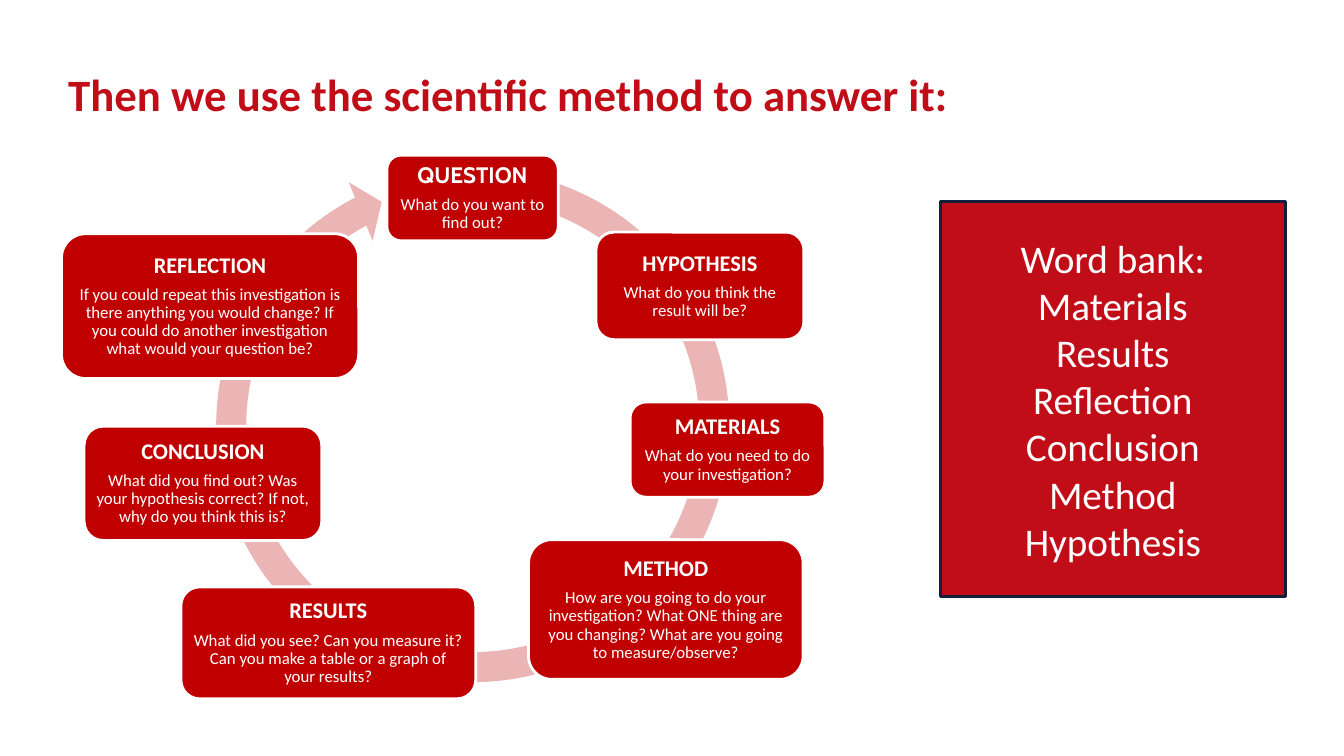
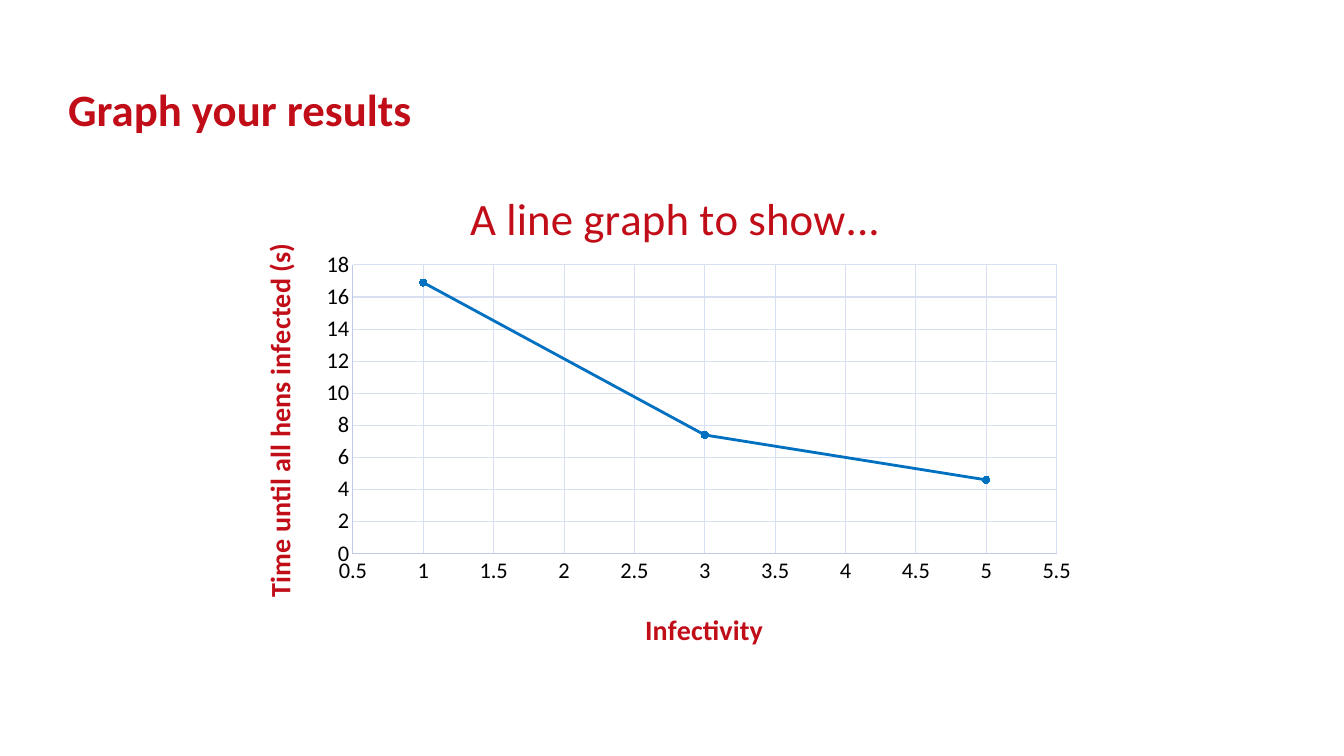
import lxml.etree
import pptx
import pptx.chart.data
import pptx.dml.color
import pptx.enum.chart
import pptx.enum.shapes
import pptx.enum.text
import pptx.oxml.ns
import pptx.util

Cm = pptx.util.Cm
Pt = pptx.util.Pt
qn = pptx.oxml.ns.qn
rgb = pptx.dml.color.RGBColor.from_string
shape_types = pptx.enum.shapes.MSO_SHAPE
middle = pptx.enum.text.MSO_ANCHOR.MIDDLE
center = pptx.enum.text.PP_ALIGN.CENTER

RED = "C10D18"
DARK_RED = "C00000"
NAVY = "141F3C"
WHITE = "FFFFFF"
BLACK = "000000"
BLUE = "0070C0"
AXIS_BLUE = "BDCAE9"
GRID_BLUE = "D8DFF2"
FONT = "Calibri"


def style_font(font, size, color, bold=False, name=FONT):
    font.name = name
    font.size = Pt(size)
    font.bold = bold
    font.color.rgb = rgb(color)


def set_layout(element, position, **fractions):
    """Place a chart part by fractions of the chart's width and height."""
    layout = element.find(qn("c:layout"))
    if layout is None:
        layout = lxml.etree.Element(qn("c:layout"))
        element.insert(position, layout)
    manual = lxml.etree.SubElement(layout, qn("c:manualLayout"))
    if "w" in fractions:
        lxml.etree.SubElement(manual, qn("c:layoutTarget")).set("val", "inner")
    for side in ("x", "y"):
        lxml.etree.SubElement(manual, qn(f"c:{side}Mode")).set("val", "edge")
    for key, value in fractions.items():
        lxml.etree.SubElement(manual, qn(f"c:{key}")).set("val", str(value))


deck = pptx.Presentation()
deck.slide_width = Cm(33.87)
deck.slide_height = Cm(19.05)

# Slides and their titles
slides = []
for heading, top in (
    ("Then we use the scientific method to answer it:", 1.45),
    ("Graph your results", 1.83),
):
    slide = deck.slides.add_slide(deck.slide_layouts[6])
    box = slide.shapes.add_textbox(Cm(1.47), Cm(top), Cm(30.7), Cm(1.8))
    box.text_frame.word_wrap = True
    box.text_frame.vertical_anchor = middle
    box.text_frame.text = heading
    style_font(box.text_frame.paragraphs[0].runs[0].font, 32, RED, bold=True)
    slides.append(slide)
method_slide, graph_slide = slides

# Cycle arrow
arrow = method_slide.shapes.add_shape(
    shape_types.CIRCULAR_ARROW, Cm(5.03), Cm(3.84), Cm(13.77), Cm(13.77)
)
arrow.shadow.inherit = False
for index, value in enumerate((0.055, 3.307, 145.413, 169.356, 0.058)):
    arrow.adjustments[index] = value
arrow.fill.solid()
arrow.fill.fore_color.rgb = rgb(DARK_RED)
arrow.line.fill.background()
arrow_color = arrow.fill._xPr.find(qn("a:solidFill"))[0]
lxml.etree.SubElement(arrow_color, qn("a:alpha")).set("val", "29000")

# Steps: left, top, width, height, heading font, heading, prompt
steps = (
    (9.75, 3.91, 4.32, 2.16, "Cabin", "QUESTION", "What do you want to find out?"),
    (15.02, 5.85, 5.24, 2.71, FONT, "HYPOTHESIS",
     "What do you think the result will be?"),
    (15.88, 10.13, 4.91, 2.4, FONT, "MATERIALS",
     "What do you need to do your investigation?"),
    (13.32, 13.6, 6.92, 3.52, FONT, "METHOD",
     "How are you going to do your investigation? What ONE thing are you "
     "changing? What are you going to measure/observe?"),
    (4.56, 14.79, 7.43, 2.82, FONT, "RESULTS",
     "What did you see? Can you measure it? Can you make a table or a graph "
     "of your results?"),
    (2.12, 10.74, 5.99, 2.88, FONT, "CONCLUSION",
     "What did you find out? Was your hypothesis correct? If not, why do you "
     "think this is?"),
    (1.55, 5.89, 7.49, 3.65, FONT, "REFLECTION",
     "If you could repeat this investigation is there anything you would "
     "change? If you could do another investigation what would your question be?"),
)
for left, top, width, height, heading_font, heading, prompt in steps:
    box = method_slide.shapes.add_shape(
        shape_types.ROUNDED_RECTANGLE, Cm(left), Cm(top), Cm(width), Cm(height)
    )
    box.shadow.inherit = False
    box.fill.solid()
    box.fill.fore_color.rgb = rgb(DARK_RED)
    box.line.color.rgb = rgb(WHITE)
    box.line.width = Pt(2)
    frame = box.text_frame
    frame.word_wrap = True
    frame.vertical_anchor = middle
    frame.margin_left = frame.margin_right = Cm(0.17)
    frame.margin_top = frame.margin_bottom = Cm(0.17)
    frame.text = f"{heading}\n{prompt}"
    looks = ((16, True, heading_font), (12, False, FONT))
    for para, (size, bold, name) in zip(frame.paragraphs, looks):
        para.alignment = center
        para.line_spacing = 0.9
        para.space_after = Pt(0.35 * size)
        style_font(para.runs[0].font, size, WHITE, bold, name)

# Word bank
bank = method_slide.shapes.add_shape(
    shape_types.RECTANGLE, Cm(23.7), Cm(5.08), Cm(8.69), Cm(9.96)
)
bank.shadow.inherit = False
bank.fill.solid()
bank.fill.fore_color.rgb = rgb(RED)
bank.line.color.rgb = rgb(NAVY)
bank.line.width = Pt(2)
bank.text_frame.word_wrap = True
bank.text_frame.vertical_anchor = middle
bank.text_frame.text = (
    "Word bank:\nMaterials\nResults\nReflection\nConclusion\nMethod\nHypothesis"
)
for para in bank.text_frame.paragraphs:
    para.alignment = center
    style_font(para.runs[0].font, 28, WHITE)

# Line graph
data = pptx.chart.data.XyChartData()
points = data.add_series("Series 1")
for infectivity, seconds in ((1, 16.9), (3, 7.4), (5, 4.6)):
    points.add_data_point(infectivity, seconds)
chart = graph_slide.shapes.add_chart(
    pptx.enum.chart.XL_CHART_TYPE.XY_SCATTER_LINES,
    Cm(6.25), Cm(4.01), Cm(21.16), Cm(12.7), data,
).chart
style_font(chart.font, 10, "283F78")
chart.has_legend = False
chart.has_title = True
plot = chart.plots[0]
plot.vary_by_categories = False
set_layout(chart._chartSpace.chart.plotArea, 0, x=0.125, y=0.21, w=0.838, h=0.573)

series = plot.series[0]
series.smooth = False
series.format.line.color.rgb = rgb(BLUE)
series.format.line.width = Pt(2)
series.marker.style = pptx.enum.chart.XL_MARKER_STYLE.CIRCLE
series.marker.size = 5
series.marker.format.fill.solid()
series.marker.format.fill.fore_color.rgb = rgb(BLUE)
series.marker.format.line.color.rgb = rgb(BLUE)

x_axis, y_axis = chart.category_axis, chart.value_axis
for axis, low, high, step in ((x_axis, 0.5, 5.5, 0.5), (y_axis, 0, 18, 2)):
    axis.minimum_scale = low
    axis.maximum_scale = high
    axis.major_unit = step
    axis.major_tick_mark = pptx.enum.chart.XL_TICK_MARK.NONE
    axis.minor_tick_mark = pptx.enum.chart.XL_TICK_MARK.NONE
    axis.has_title = True
    axis.has_major_gridlines = True
    axis.tick_labels.number_format = "General"
    axis.tick_labels.number_format_is_linked = False
    style_font(axis.tick_labels.font, 16, BLACK)
    for line, color in (
        (axis.format.line, AXIS_BLUE),
        (axis.major_gridlines.format.line, GRID_BLUE),
    ):
        line.color.rgb = rgb(color)
        line.width = Pt(0.75)

for title, text, size, bold, x, y in (
    (chart.chart_title, "A line graph to show...", 32, False, 0.255, 0.04),
    (x_axis.axis_title, "Infectivity", 20, True, 0.467, 0.885),
    (y_axis.axis_title, "Time until all hens infected (s)", 20, True, 0.008, 0.157),
):
    title.text_frame.text = text
    style_font(title.text_frame.paragraphs[0].runs[0].font, size, RED, bold)
    set_layout(title._element, 1, x=x, y=y)
y_title_body = y_axis.axis_title.text_frame._txBody.find(qn("a:bodyPr"))
y_title_body.set("rot", "-5400000")
y_title_body.set("vert", "horz")

deck.save("out.pptx")
